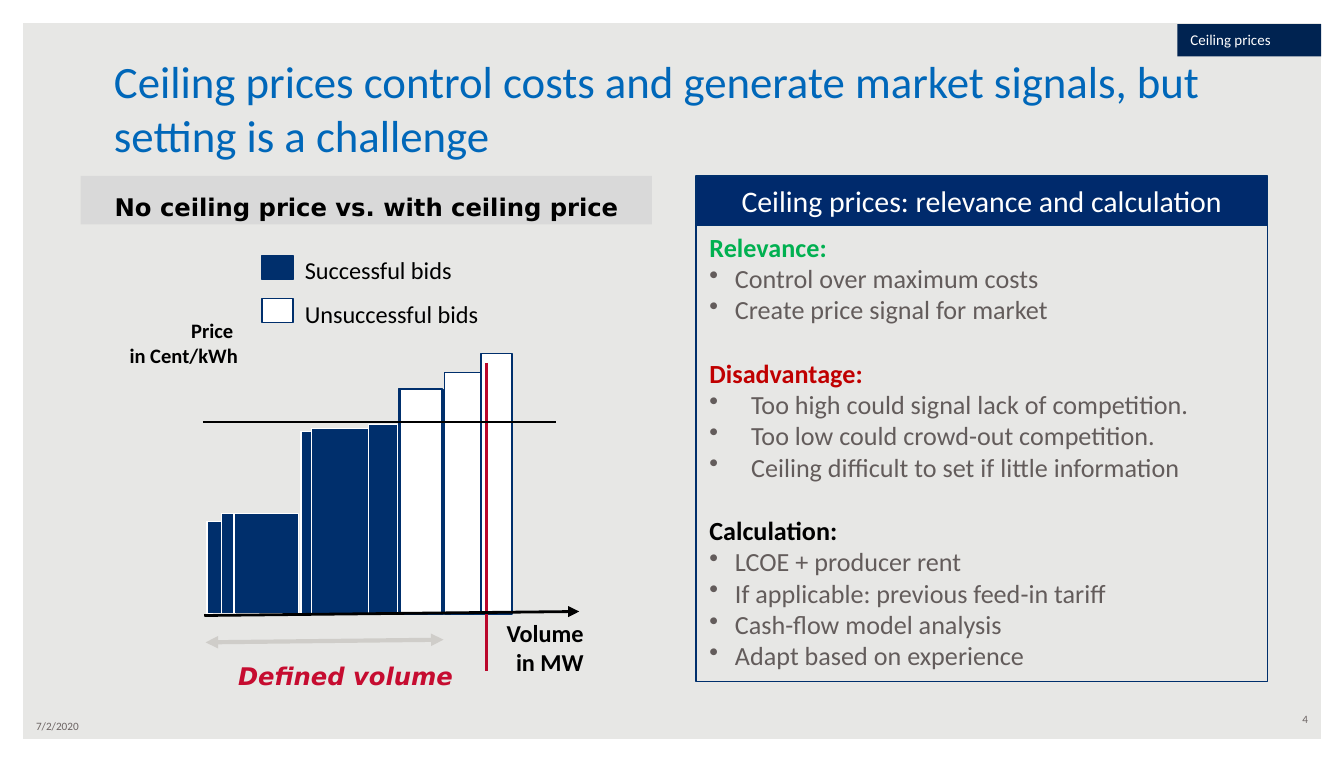
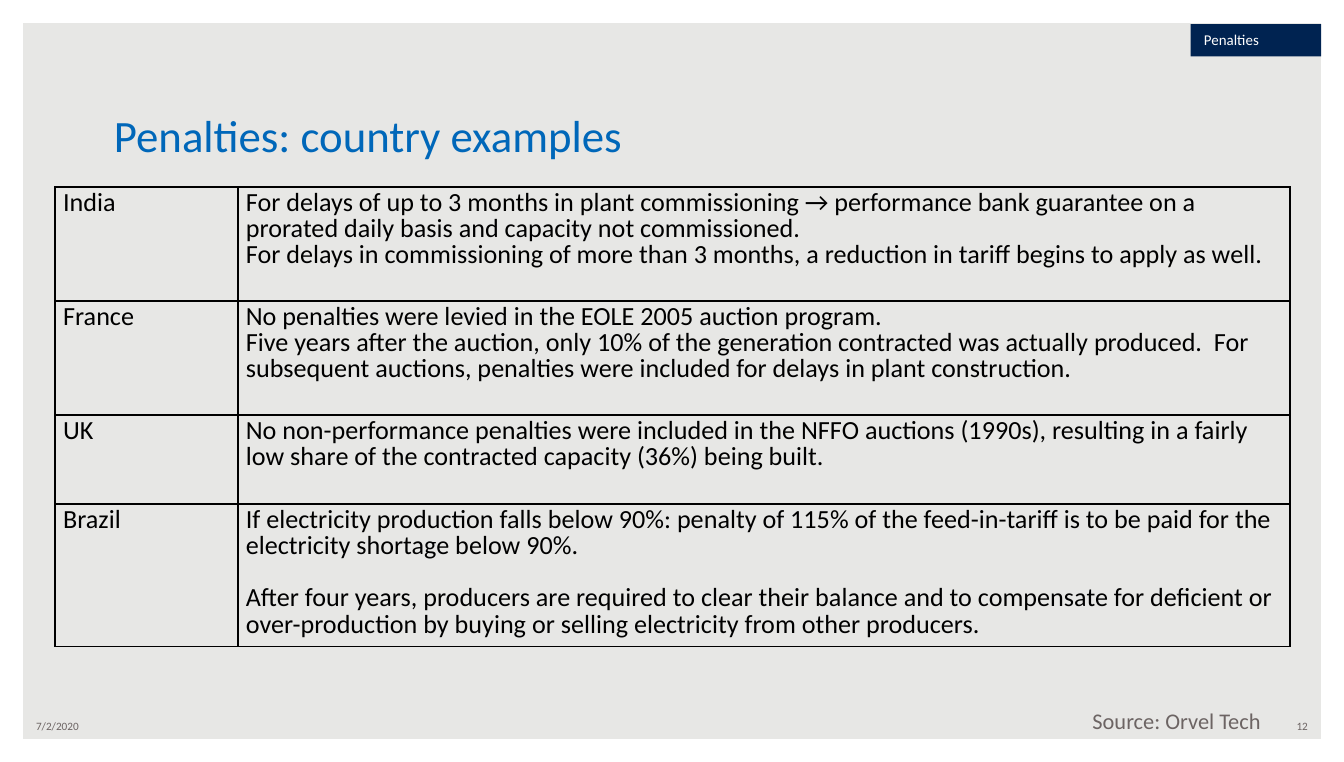
from lxml import etree
from pptx import Presentation
from pptx import util as u
from pptx.dml.color import RGBColor
from pptx.enum import shapes, text
from pptx.oxml import ns

PAPER = RGBColor(0xE7, 0xE7, 0xE5)
WHITE = RGBColor(0xFF, 0xFF, 0xFF)
BLACK = RGBColor(0, 0, 0)
TITLE_BLUE = RGBColor(0x00, 0x67, 0xB9)
TAG_NAVY = RGBColor(0x00, 0x23, 0x51)
HEADER_NAVY = RGBColor(0x00, 0x2A, 0x6C)
BID_NAVY = RGBColor(0x00, 0x2F, 0x6C)
FOOTER_GREY = RGBColor(0x6C, 0x64, 0x63)
BODY_GREY = RGBColor(0x63, 0x5C, 0x5B)
BAND_GREY = RGBColor(0xD9, 0xD9, 0xD9)
ARROW_GREY = RGBColor(0xCF, 0xCD, 0xC9)
GREEN = RGBColor(0x00, 0xB0, 0x50)
DARK_RED = RGBColor(0xC0, 0x00, 0x00)
LIMIT_RED = RGBColor(0xBA, 0x07, 0x2B)
VOLUME_RED = RGBColor(0xC6, 0x0C, 0x30)

BODY_FONT, LABEL_FONT = "Calibri", "DejaVu Sans"
LEFT, CENTER, RIGHT = text.PP_ALIGN.LEFT, text.PP_ALIGN.CENTER, text.PP_ALIGN.RIGHT
TOP, MIDDLE, BOTTOM = text.MSO_ANCHOR.TOP, text.MSO_ANCHOR.MIDDLE, text.MSO_ANCHOR.BOTTOM
COLUMNS = 100  # square grid cells across the slide width


def add_xml(parent, tag, **attributes):
    return etree.SubElement(parent, ns.qn(tag), **attributes)


def write_text(frame, paragraphs, **common):
    """Fill a text frame; a paragraph is a string or (string, overriding format)."""
    frame.word_wrap = True
    for index, item in enumerate(paragraphs):
        words, own = (item, {}) if isinstance(item, str) else item
        style = {**common, **own}
        paragraph = frame.paragraphs[0] if index == 0 else frame.add_paragraph()
        if "bullet_indent" in style:
            indent = u.Inches(style["bullet_indent"])
            properties = paragraph._p.get_or_add_pPr()
            properties.set("marL", str(indent))
            properties.set("indent", str(-indent))
            add_xml(properties, "a:buChar", char="•")
        paragraph.alignment = style.get("align", LEFT)
        if "spacing" in style:
            paragraph.line_spacing = style["spacing"]
        if "before" in style:
            paragraph.space_before = u.Pt(style["before"])
        run = paragraph.add_run()
        run.text = words
        run.font.name = style.get("font", BODY_FONT)
        run.font.size = u.Pt(style["size"])
        run.font.bold = style.get("bold", False)
        run.font.italic = style.get("italic", False)
        run.font.color.rgb = style.get("color", BLACK)


class Deck:
    def __init__(self):
        self.presentation = Presentation()
        self.presentation.slide_width = u.Inches(10)
        self.presentation.slide_height = u.Inches(5.67)
        self.cell = self.presentation.slide_width / COLUMNS
        self.slide = None

    def grid(self, *cells):
        return [u.Emu(round(count * self.cell)) for count in cells]

    def new_slide(self, title, tag, tag_width, number, number_row):
        self.slide = self.presentation.slides.add_slide(self.presentation.slide_layouts[6])
        fill = self.slide.background.fill
        fill.solid()
        fill.fore_color.rgb = PAPER
        frame = self.shape((0, 0, 100, 56.7), WHITE, kind=shapes.MSO_SHAPE.FRAME)
        frame.adjustments[0] = 0.03
        footer = dict(anchor=MIDDLE, size=6, color=FOOTER_GREY)
        self.label((1.7, 53, 23.3, 2), ["7/2/2020"], **footer)
        self.label((75, number_row, 23.3, 2), [number], align=RIGHT, **footer)
        self.label((7.5, 3.4, 85, 9.1), [title], anchor=BOTTOM, size=24, color=TITLE_BLUE)
        self.shape((98.3 - tag_width, 1.8, tag_width, 2.4), TAG_NAVY,
                   paragraphs=[tag], size=8, color=WHITE)

    def label(self, box, paragraphs, anchor=TOP, **style):
        frame = self.slide.shapes.add_textbox(*self.grid(*box)).text_frame
        frame.vertical_anchor = anchor
        write_text(frame, paragraphs, **style)

    def shape(self, box, fill=None, outline=None, kind=shapes.MSO_SHAPE.RECTANGLE,
              paragraphs=(), **style):
        shape = self.slide.shapes.add_shape(kind, *self.grid(*box))
        shape.shadow.inherit = False
        if fill is None:
            shape.fill.background()
        else:
            shape.fill.solid()
            shape.fill.fore_color.rgb = fill
        if outline is None:
            shape.line.fill.background()
        else:
            shape.line.color.rgb = outline
            shape.line.width = u.Pt(0.75)
        if paragraphs:
            shape.text_frame.vertical_anchor = TOP
            write_text(shape.text_frame, paragraphs, **style)
        return shape

    def line(self, start, end, color=BLACK, width=1.5, arrows=()):
        """Draw a straight line; arrows names the ends: headEnd, tailEnd."""
        line = self.slide.shapes.add_connector(
            shapes.MSO_CONNECTOR.STRAIGHT, *self.grid(*start, *end))
        line.line.color.rgb = color
        line.line.width = u.Pt(width)
        properties = line.element.spPr
        for arrow in arrows:
            add_xml(properties.find(ns.qn("a:ln")), f"a:{arrow}", type="triangle")
        add_xml(properties, "a:effectLst")

    def table(self, left, top, widths, heights, rows, **style):
        table = self.slide.shapes.add_table(
            len(rows), len(widths),
            *self.grid(left, top, sum(widths), sum(heights))).table
        table.first_row = table.horz_banding = False
        for column, width in zip(table.columns, self.grid(*widths)):
            column.width = width
        for row, height, contents in zip(table.rows, self.grid(*heights), rows):
            row.height = height
            for cell, paragraphs in zip(row.cells, contents):
                self.format_cell(cell)
                write_text(cell.text_frame, paragraphs, **style)

    def format_cell(self, cell):
        cell.margin_left, cell.margin_right = self.grid(0.6, 0.6)
        cell.margin_top, cell.margin_bottom = self.grid(0.4, 0.4)
        properties = cell._tc.get_or_add_tcPr()
        for side in ("lnL", "lnR", "lnT", "lnB"):
            border = add_xml(properties, f"a:{side}", w=str(u.Pt(1)))
            add_xml(add_xml(border, "a:solidFill"), "a:srgbClr", val=str(BLACK))
        cell.fill.background()


def draw_bids(deck):
    baseline = 45.7
    successful = [(15.4, 38.8, 1.1), (16.5, 38.2, 0.9), (17.4, 38.2, 4.8),
                  (22.4, 32.1, 0.8), (23.2, 31.9, 4.3), (27.4, 31.6, 2.2)]
    unsuccessful = [(29.8, 29, 3.2), (33.1, 27.7, 2.7), (35.8, 26.3, 2.3)]
    for bids, fill, outline in ((successful, BID_NAVY, WHITE),
                                (unsuccessful, WHITE, BID_NAVY)):
        for left, top, width in bids:
            deck.shape((left, top, width, baseline - top), fill, outline)
    deck.shape((29.7, 28.9, 3.2, 16.7), outline=BID_NAVY)

    for row, fill in ((19, BID_NAVY), (22.2, WHITE)):
        deck.shape((19.5, row, 2.3, 1.8), fill, BID_NAVY)
    deck.label((21.7, 17.4, 17, 7.2), ["Successful bids", "Unsuccessful bids"],
               size=13, spacing=1.5)
    deck.label((5.6, 23.2, 13.1, 4.7), ["Price ", "in Cent/kWh"],
               size=11, bold=True, align=RIGHT)
    deck.label((34.4, 45.5, 10, 5.4), ["Volume", "in MW"],
               size=13, bold=True, align=RIGHT)
    deck.label((15.7, 48, 20, 4), ["Defined volume"], size=13, bold=True, italic=True,
               font=LABEL_FONT, color=VOLUME_RED, align=CENTER, spacing=u.Pt(21))

    deck.line((33, 47.6), (15.3, 47.8), ARROW_GREY, 2.25, ("headEnd", "tailEnd"))
    deck.line((36.2, 27), (36.2, 49.9), LIMIT_RED)
    deck.line((15.2, 45.8), (43.1, 45.5), arrows=("tailEnd",))
    deck.line((15.1, 31.4), (41.4, 31.4))


def build_ceiling_prices(deck):
    deck.new_slide("Ceiling prices control costs and generate market signals, "
                   "but setting is a challenge", "Ceiling prices", 10.7, "4", 52.5)
    deck.shape((6, 13.1, 42.5, 3.6), BAND_GREY,
               paragraphs=["No ceiling price vs. with ceiling price"], size=13, bold=True,
               font=LABEL_FONT, align=CENTER, spacing=u.Pt(21))
    draw_bids(deck)

    sections = [
        ("Relevance:", GREEN, 0.19,
         ["Control over maximum costs", "Create price signal for market"]),
        ("Disadvantage:", DARK_RED, 0.31,
         ["Too high could signal lack of competition.",
          "Too low could crowd-out competition.",
          "Ceiling difficult to set if little information"]),
        ("Calculation:", BLACK, 0.19,
         ["LCOE + producer rent", "If applicable: previous feed-in tariff",
          "Cash-flow model analysis", "Adapt based on experience"]),
    ]
    paragraphs = []
    for heading, color, indent, points in sections:
        gap = {"before": 17} if paragraphs else {}
        paragraphs.append((heading, dict(color=color, bold=True, **gap)))
        paragraphs += [(point, dict(bullet_indent=indent)) for point in points]
    deck.shape((51.8, 16.7, 42.5, 34), outline=BID_NAVY,
               paragraphs=paragraphs, size=14, color=BODY_GREY)
    deck.shape((51.8, 13.1, 42.5, 3.7), HEADER_NAVY, BID_NAVY,
               paragraphs=["Ceiling prices: relevance and calculation"],
               size=16, color=WHITE, align=CENTER)


def build_penalties(deck):
    deck.new_slide("Penalties: country examples", "Penalties", 9.7, "12", 53)
    deck.label((71.7, 52.1, 31.7, 3), ["Source: Orvel Tech"], anchor=MIDDLE,
               size=12, color=FOOTER_GREY, align=CENTER)
    countries = [
        (["India"],
         ["For delays of up to 3 months in plant commissioning → performance bank "
          "guarantee on a prorated daily basis and capacity not commissioned.",
          "For delays in commissioning of more than 3 months, a reduction in tariff "
          "begins to apply as well."]),
        (["France"],
         ["No penalties were levied in the EOLE 2005 auction program.",
          "Five years after the auction, only 10% of the generation contracted was "
          "actually produced.  For subsequent auctions, penalties were included for "
          "delays in plant construction."]),
        (["UK"],
         ["No non-performance penalties were included in the NFFO auctions (1990s), "
          "resulting in a fairly low share of the contracted capacity (36%) being built."]),
        (["Brazil"],
         ["If electricity production falls below 90%: penalty of 115% of the "
          "feed-in-tariff is to be paid for the electricity shortage below 90%.",
          ("After four years, producers are required to clear their balance and to "
           "compensate for deficient or over-production by buying or selling "
           "electricity from other producers.", dict(before=14))]),
    ]
    deck.table(4.1, 13.9, (13.6, 78.3), (8.5, 8.5, 6.6, 10.6), countries,
               size=14, spacing=u.Pt(14))


def main():
    deck = Deck()
    build_ceiling_prices(deck)
    build_penalties(deck)
    deck.presentation.save("out.pptx")


if __name__ == "__main__":
    main()
